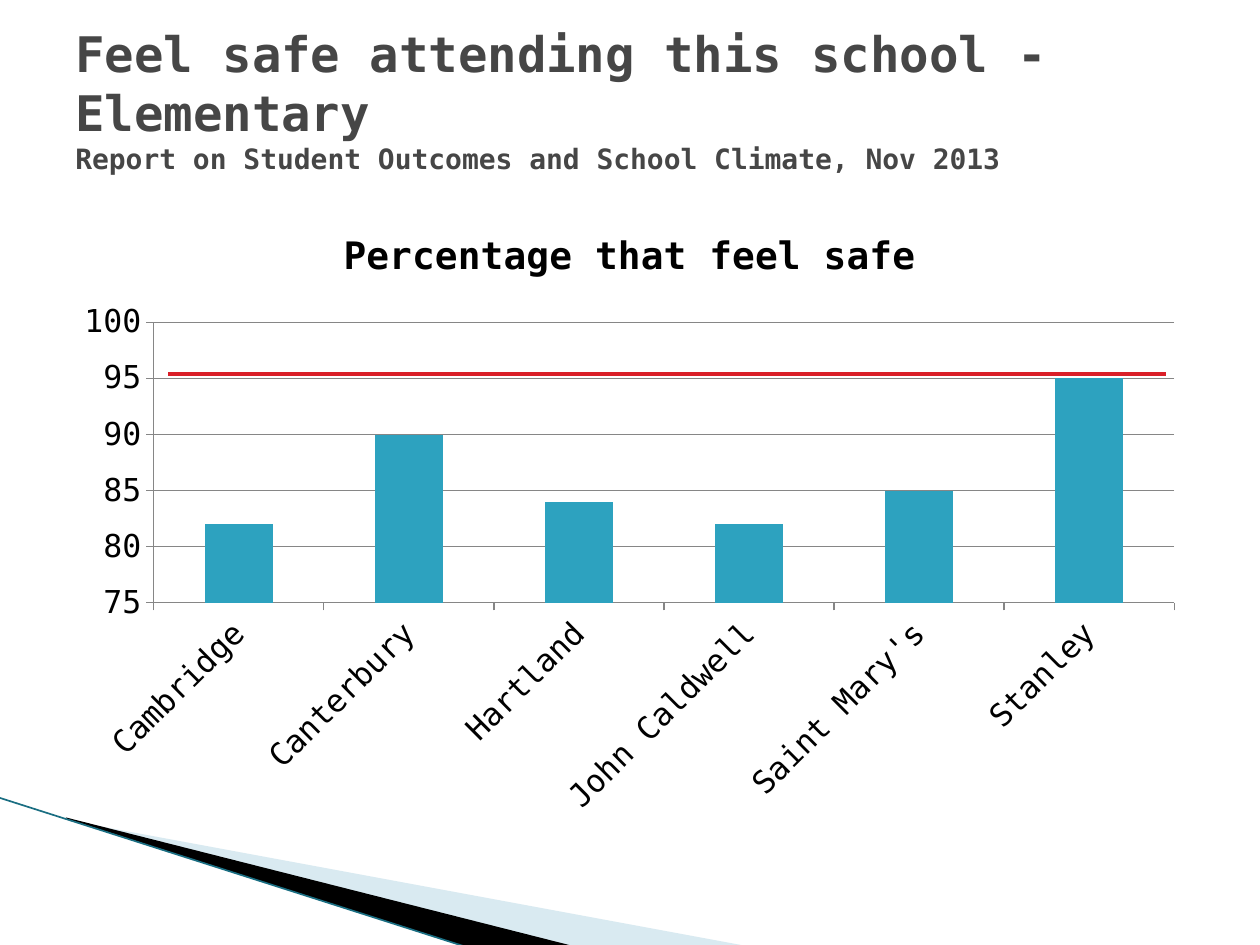
from lxml.etree import SubElement
from pptx import Presentation
from pptx.chart.data import CategoryChartData
from pptx.dml.color import RGBColor
from pptx.enum.chart import XL_CHART_TYPE, XL_TICK_MARK
from pptx.enum.shapes import MSO_CONNECTOR
from pptx.enum.text import MSO_ANCHOR
from pptx.oxml import parse_xml
from pptx.oxml.ns import nsdecls, qn
from pptx.util import Cm, Pt

FONT = "DejaVu Sans Mono"
BLACK = RGBColor(0x00, 0x00, 0x00)
SLATE = RGBColor(0x46, 0x46, 0x46)
GREY = RGBColor(0x86, 0x86, 0x86)
TEAL = RGBColor(0x2D, 0xA2, 0xBF)
DARK_TEAL = RGBColor(0x1A, 0x6E, 0x82)
PALE_BLUE = RGBColor(0xA0, 0xCB, 0xDC)
RED = RGBColor(0xDA, 0x1F, 0x28)

SAFE_PERCENT = {
    "Cambridge": 82,
    "Canterbury": 90,
    "Hartland": 84,
    "John Caldwell": 82,
    "Saint Mary's": 85,
    "Stanley": 95,
}


def add_line(slide, start, end, color, width):
    """Draw a straight line between two points given in centimetres."""
    points = [Cm(value) for value in (*start, *end)]
    line = slide.shapes.add_connector(MSO_CONNECTOR.STRAIGHT, *points)
    line.line.color.rgb = color
    line.line.width = Pt(width)
    SubElement(line._element.spPr, qn("a:effectLst"))


def add_wedge(slide, left, top, points, color, opacity=100):
    """Draw a filled outline whose points are relative to left and top."""
    corners = [(Cm(left + x), Cm(top + y)) for x, y in points]
    builder = slide.shapes.build_freeform(*corners[0], scale=1.0)
    builder.add_line_segments(corners[1:], close=True)
    wedge = builder.convert_to_shape()
    wedge.shadow.inherit = False
    wedge.fill.solid()
    wedge.fill.fore_color.rgb = color
    wedge.line.fill.background()
    if opacity < 100:
        fill_color = wedge._element.spPr.find(qn("a:solidFill"))[0]
        SubElement(fill_color, qn("a:alpha"), val=str(opacity * 1000))


def add_corner_sweep(slide, left, top):
    """Draw the wedges and edge line in the lower left corner."""
    add_wedge(slide, left + 1.4, top + 0.43,
              [(0, 0.03), (13.72, 2.57), (10.18, 2.57), (0, 0)], PALE_BLUE, 40)
    add_wedge(slide, left + 1.35, top + 0.4,
              [(0, 0), (10.26, 2.6), (8.1, 2.62), (0.03, 0.03)], BLACK)
    add_line(slide, (left, top), (left + 9.45, top + 3.02), DARK_TEAL, 0.95)


def add_title(slide, left, top, width, height):
    """Write the heading and the report name below it."""
    box = slide.shapes.add_textbox(Cm(left), Cm(top), Cm(width), Cm(height))
    frame = box.text_frame
    frame.word_wrap = True
    frame.vertical_anchor = MSO_ANCHOR.MIDDLE
    frame.margin_bottom = Cm(0.81)
    frame.text = ("Feel safe attending this school - Elementary\n"
                  "Report on Student Outcomes and School Climate, Nov 2013")
    for para, size in zip(frame.paragraphs, (28, 16)):
        font = para.runs[0].font
        font.name = FONT
        font.size = Pt(size)
        font.bold = True
        font.color.rgb = SLATE


def set_plot_layout(chart, x, y, width, height):
    """Place the inner plot area by fractions of the chart box."""
    plot_area = chart._chartSpace.chart.plotArea
    for layout in plot_area.findall(qn("c:layout")):
        plot_area.remove(layout)
    plot_area.insert(0, parse_xml(
        f'<c:layout {nsdecls("c")}><c:manualLayout>'
        '<c:layoutTarget val="inner"/><c:xMode val="edge"/><c:yMode val="edge"/>'
        f'<c:x val="{x}"/><c:y val="{y}"/><c:w val="{width}"/><c:h val="{height}"/>'
        '</c:manualLayout></c:layout>'))


def add_safety_chart(slide, left, top, width, height):
    """Draw the column chart and the red target line across it."""
    data = CategoryChartData()
    data.categories = list(SAFE_PERCENT)
    data.add_series("Percentage that feel safe", list(SAFE_PERCENT.values()))
    chart = slide.shapes.add_chart(
        XL_CHART_TYPE.COLUMN_CLUSTERED,
        Cm(left), Cm(top), Cm(width), Cm(height), data).chart
    chart.font.name = FONT
    chart.font.size = Pt(18)
    chart.font.color.rgb = BLACK
    chart.has_legend = False

    chart.has_title = True
    title = chart.chart_title.text_frame
    title.text = "Percentage that feel safe"
    font = title.paragraphs[0].runs[0].font
    font.name = FONT
    font.size = Pt(21.6)
    font.bold = True
    font.color.rgb = BLACK

    plot = chart.plots[0]
    plot.gap_width = 150
    plot.vary_by_categories = False
    columns = plot.series[0].format.fill
    columns.solid()
    columns.fore_color.rgb = TEAL

    values = chart.value_axis
    values.minimum_scale = 75
    values.maximum_scale = 100
    values.major_unit = 5
    values.has_major_gridlines = True
    values.major_gridlines.format.line.color.rgb = GREY
    for axis in (chart.category_axis, values):
        axis.major_tick_mark = XL_TICK_MARK.OUTSIDE
        axis.format.line.color.rgb = GREY
        axis.tick_labels.font.size = Pt(18)
    labels = chart.category_axis._element.find(qn("c:txPr"))
    labels.find(qn("a:bodyPr")).set("rot", "-2700000")
    set_plot_layout(chart, 0.08, 0.19, 0.9, 0.45)

    add_line(slide, (left + 22.23, top + 3.43), (left + 2.11, top + 3.43), RED, 2)


def main():
    """Build the slide and save the deck."""
    deck = Presentation()
    deck.slide_width = Cm(25.4)
    deck.slide_height = Cm(19.05)
    slide = deck.slides.add_slide(deck.slide_layouts[6])
    add_corner_sweep(slide, -0.02, 16.08)
    add_title(slide, 1.27, 0.76, 22.86, 3.18)
    add_safety_chart(slide, 1.27, 4.11, 22.86, 12.57)
    deck.save("out.pptx")


if __name__ == "__main__":
    main()
